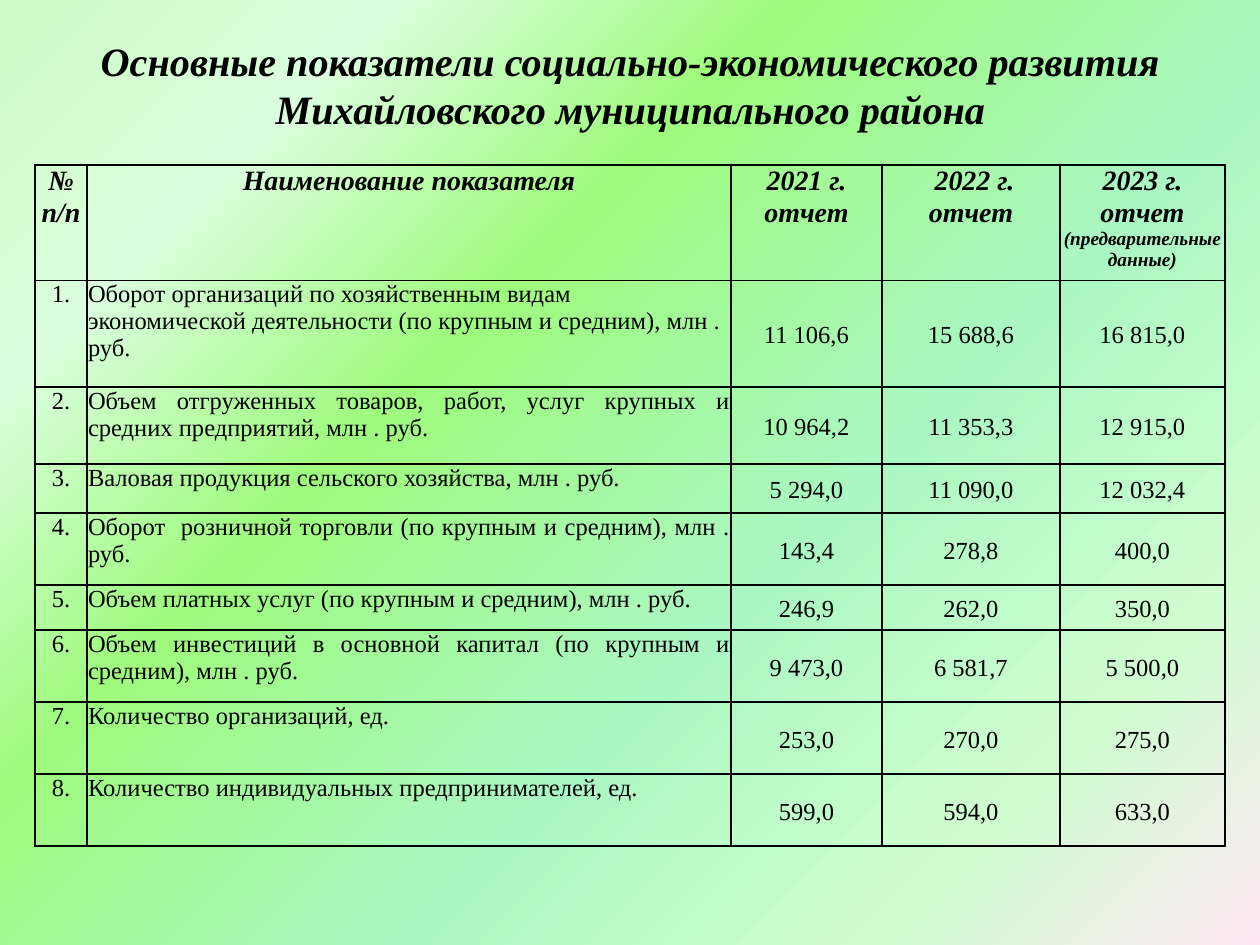
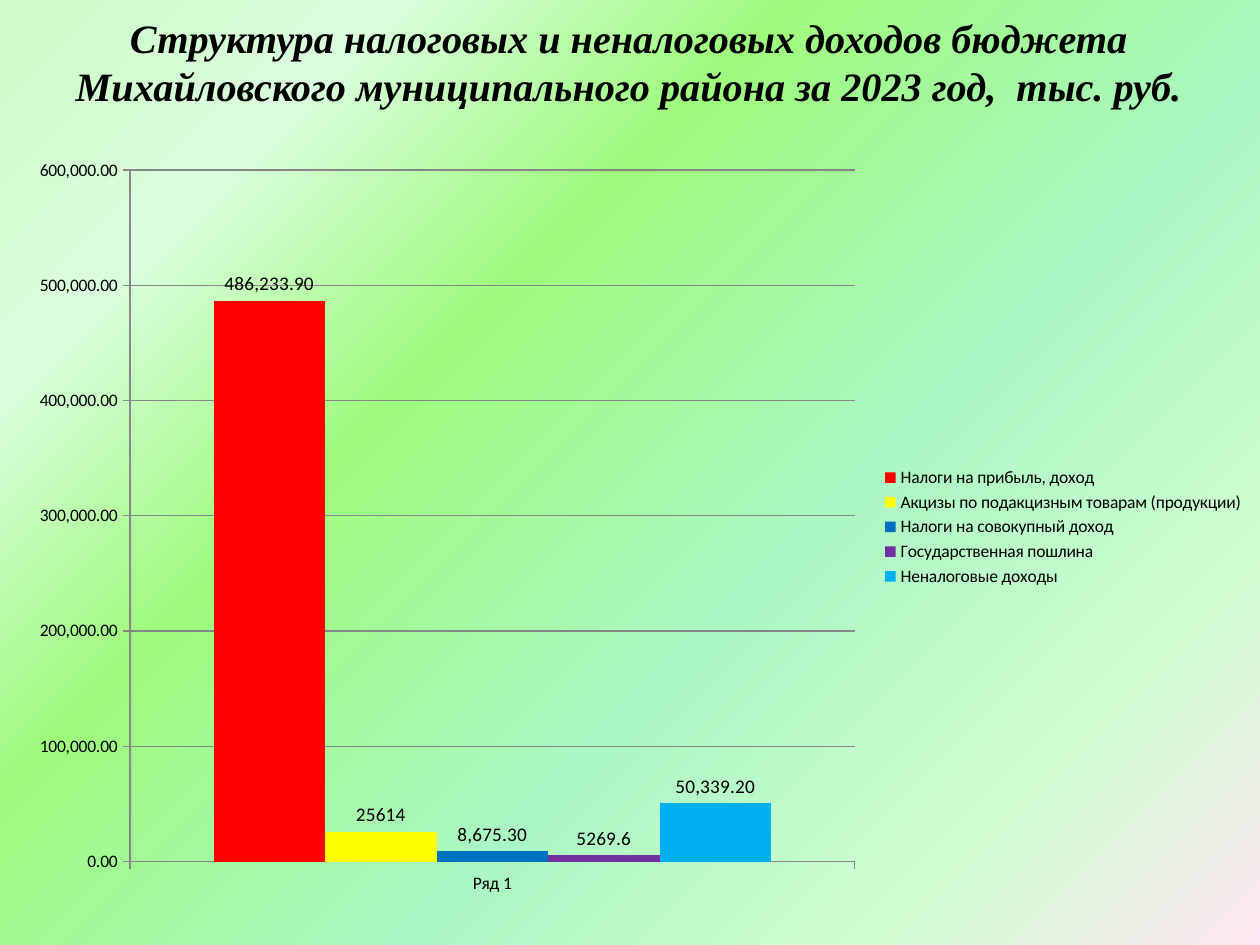
from lxml.etree import SubElement
from pptx import Presentation
from pptx.chart.data import CategoryChartData
from pptx.dml.color import RGBColor
from pptx.enum.chart import XL_CHART_TYPE as ChartType
from pptx.enum.chart import XL_LABEL_POSITION as LabelPosition
from pptx.enum.chart import XL_LEGEND_POSITION as LegendPosition
from pptx.enum.chart import XL_TICK_MARK as TickMark
from pptx.enum.text import MSO_ANCHOR as Anchor
from pptx.enum.text import MSO_AUTO_SIZE as AutoSize
from pptx.enum.text import PP_ALIGN as Align
from pptx.oxml import parse_xml
from pptx.oxml.ns import nsdecls, qn
from pptx.util import Emu, Pt

# Shared look
PX_PER_INCH = 126
SERIF, SANS = "Times New Roman", "Calibri"
BLACK, GREY = "000000", "868686"
TITLE_SIZE = 23
BACKGROUND_STOPS = [(0, "CEFBC7"), (18, "DAFEDD"), (36, "9EFB7D"),
                    (61, "ABF7C3"), (82, "CFFDD0"), (100, "FEE7F2")]

# Indicator table
COLUMN_WIDTHS = [52, 644, 151, 178, 165]
ROW_HEIGHTS = [115, 107, 77, 49, 72, 45, 72, 72, 72]
HEADERS = ["№ n/n", "Наименование показателя", "2021 г. отчет",
           " 2022 г. отчет", "2023 г. отчет "]
HEADER_NOTE = "(предварительные данные)"
INDICATORS = [
    ("Оборот организаций по хозяйственным видам экономической деятельности "
     "(по крупным и средним), млн . руб.", "11 106,6", "15 688,6", "16 815,0"),
    ("Объем отгруженных товаров, работ, услуг крупных и средних предприятий, "
     "млн . руб.", "10 964,2", "11 353,3", "12 915,0"),
    ("Валовая продукция сельского хозяйства, млн . руб.",
     "5 294,0", "11 090,0", "12 032,4"),
    ("Оборот  розничной торговли (по крупным и средним), млн . руб.",
     "143,4", "278,8", "400,0"),
    ("Объем платных услуг (по крупным и средним), млн . руб.",
     "246,9", "262,0", "350,0"),
    ("Объем инвестиций в основной капитал (по крупным и средним), млн . руб.",
     "9 473,0", "6 581,7", "5 500,0"),
    ("Количество организаций, ед.", "253,0", "270,0", "275,0"),
    ("Количество индивидуальных предпринимателей, ед.",
     "599,0", "594,0", "633,0"),
]
LEFT_ALIGNED_ROWS = {1, 8}

# Income chart: name, value, colour, label format
MONEY = "#,##0.00"
INCOMES = [
    ("Налоги на прибыль, доход", 486233.9, "FF0000", MONEY),
    ("Акцизы по подакцизным товарам (продукции)", 25614, "FFFF00", "General"),
    ("Налоги на совокупный доход", 8675.3, "0070C0", MONEY),
    ("Государственная пошлина", 5269.6, "7030A0", "General"),
    ("Неналоговые доходы", 50339.2, "00B0F0", MONEY),
]


def px(length):
    return Emu(round(length * 914400 / PX_PER_INCH))


def color(hex_value):
    return RGBColor.from_string(hex_value)


def set_font(font, name, size, bold=False, italic=False):
    font.name, font.size = name, Pt(size)
    font.bold, font.italic = bold, italic
    font.color.rgb = color(BLACK)


def set_background(master):
    """Give every slide the same diagonal gradient."""
    fill = master.background.fill
    fill.gradient()
    fill.gradient_angle = 315
    stops = master.element.xpath("./p:cSld/p:bg//a:gsLst")[0]
    for stop in list(stops):
        stops.remove(stop)
    for percent, hex_value in BACKGROUND_STOPS:
        stop = SubElement(stops, qn("a:gs"), pos=str(percent * 1000))
        SubElement(stop, qn("a:srgbClr"), val=hex_value)


def add_titled_slide(deck, text, left, top, width, height):
    page = deck.slides.add_slide(deck.slide_layouts[5])
    title = page.shapes.title
    title.left, title.top = px(left), px(top)
    title.width, title.height = px(width), px(height)
    frame = title.text_frame
    frame.text = text
    frame.word_wrap, frame.auto_size = True, AutoSize.NONE
    frame.vertical_anchor = Anchor.MIDDLE
    para = frame.paragraphs[0]
    para.alignment = Align.CENTER
    set_font(para.font, SERIF, TITLE_SIZE, bold=True, italic=True)
    return page


def set_borders(cell, top=1, bottom=1):
    """Draw black cell edges; widths are in points."""
    properties = cell._tc.get_or_add_tcPr()
    edges = [("lnL", 1), ("lnR", 1), ("lnT", top), ("lnB", bottom)]
    for index, (tag, width) in enumerate(edges):
        properties.insert(index, parse_xml(
            f'<a:{tag} {nsdecls("a")} w="{Pt(width)}"><a:solidFill>'
            f'<a:srgbClr val="{BLACK}"/></a:solidFill></a:{tag}>'))


def fill_cell(cell, text, align, size, heading=False, number=False):
    cell.fill.background()
    cell.margin_left = cell.margin_right = px(9 if number else 1)
    cell.margin_top, cell.margin_bottom = px(0 if number else 1), 0
    cell.vertical_anchor = Anchor.MIDDLE if number else Anchor.TOP
    cell.text = text
    para = cell.text_frame.paragraphs[0]
    para.alignment = align
    if number:
        para.line_spacing = 1.15
    set_font(para.font, SERIF, size, bold=heading, italic=heading)
    return para


def add_indicator_table(page, left, top):
    frame = page.shapes.add_table(
        len(ROW_HEIGHTS), len(COLUMN_WIDTHS), px(left), px(top),
        px(sum(COLUMN_WIDTHS)), px(sum(ROW_HEIGHTS)))
    table = frame.table
    table.first_row = table.horz_banding = False
    for column, width in zip(table.columns, COLUMN_WIDTHS):
        column.width = px(width)
    for row, height in zip(table.rows, ROW_HEIGHTS):
        row.height = px(height)

    # Heading row
    for index, text in enumerate(HEADERS):
        cell = table.cell(0, index)
        para = fill_cell(cell, text, Align.CENTER, 16, heading=True)
        set_borders(cell, bottom=0.5)
    span = para.add_run()
    span.text = HEADER_NOTE
    span.font.size = Pt(11)

    # Numbered indicators
    for number, (name, *values) in enumerate(INDICATORS, 1):
        name_align = Align.LEFT if number in LEFT_ALIGNED_ROWS else Align.JUSTIFY
        for index, text in enumerate([f"{number}.", name, *values]):
            cell = table.cell(number, index)
            align = name_align if index == 1 else Align.CENTER
            fill_cell(cell, text, align, 14, number=index > 1)
            set_borders(cell, top=0.5 if number == 1 else 1)


def style_axis(axis):
    axis.major_tick_mark, axis.minor_tick_mark = TickMark.OUTSIDE, TickMark.NONE
    axis.format.line.color.rgb = color(GREY)


def add_income_chart(page, left, top, width, height):
    data = CategoryChartData()
    data.categories = ["Ряд 1"]
    for name, value, _, number_format in INCOMES:
        data.add_series(name, [value], number_format)
    chart = page.shapes.add_chart(
        ChartType.COLUMN_CLUSTERED, px(left), px(top), px(width), px(height),
        data).chart
    set_font(chart.font, SANS, 10)
    chart.has_title = False
    chart.has_legend = True
    chart.legend.position = LegendPosition.RIGHT
    chart.legend.include_in_layout = False

    # Axes
    style_axis(chart.category_axis)
    value_axis = chart.value_axis
    style_axis(value_axis)
    value_axis.minimum_scale, value_axis.maximum_scale = 0, 600000
    value_axis.major_unit = 100000
    value_axis.major_gridlines.format.line.color.rgb = color(GREY)
    value_axis.tick_labels.number_format = MONEY
    value_axis.tick_labels.number_format_is_linked = False

    # Columns and their labels
    plot = chart.plots[0]
    plot.gap_width, plot.overlap, plot.vary_by_categories = 150, 0, False
    for series, (_, _, hex_value, number_format) in zip(plot.series, INCOMES):
        series.invert_if_negative = False
        series.format.fill.solid()
        series.format.fill.fore_color.rgb = color(hex_value)
        labels = series.data_labels
        labels.show_value = True
        labels.position = LabelPosition.OUTSIDE_END
        labels.number_format = number_format
        labels.number_format_is_linked = False
        set_font(labels.font, SANS, 11)


def main():
    deck = Presentation()
    deck.slide_width, deck.slide_height = px(1260), px(945)
    set_background(deck.slide_master)

    page = add_titled_slide(
        deck, "Основные показатели социально-экономического развития "
        "Михайловского муниципального района", 64, 27, 1134, 115)
    add_indicator_table(page, 35, 165)

    page = add_titled_slide(
        deck, "Структура налоговых и неналоговых доходов бюджета "
        "Михайловского муниципального района за 2023 год,  тыс. руб.",
        44, 6, 1171, 111)
    add_income_chart(page, 15, 145, 1242, 764)

    deck.save("out.pptx")


if __name__ == "__main__":
    main()
